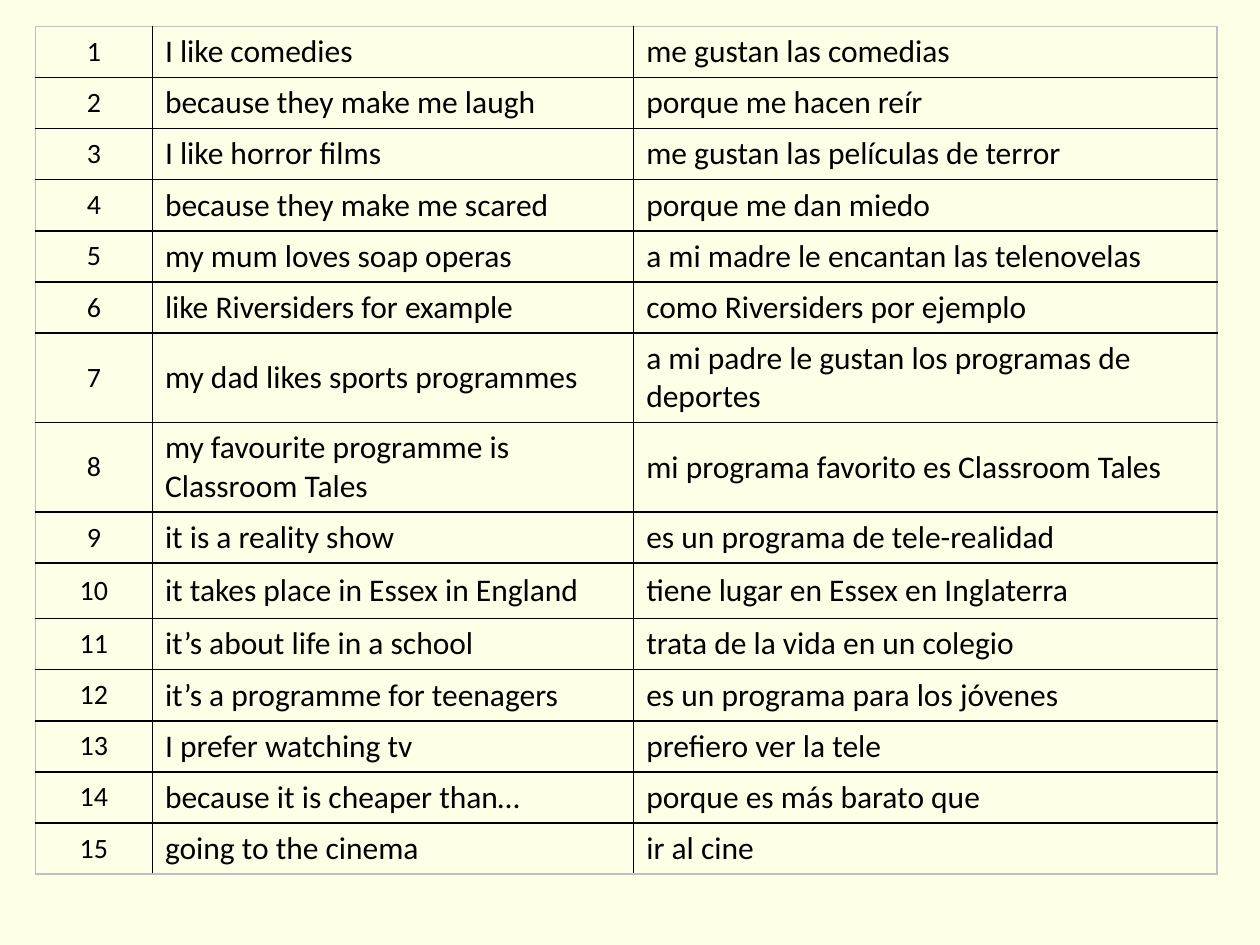
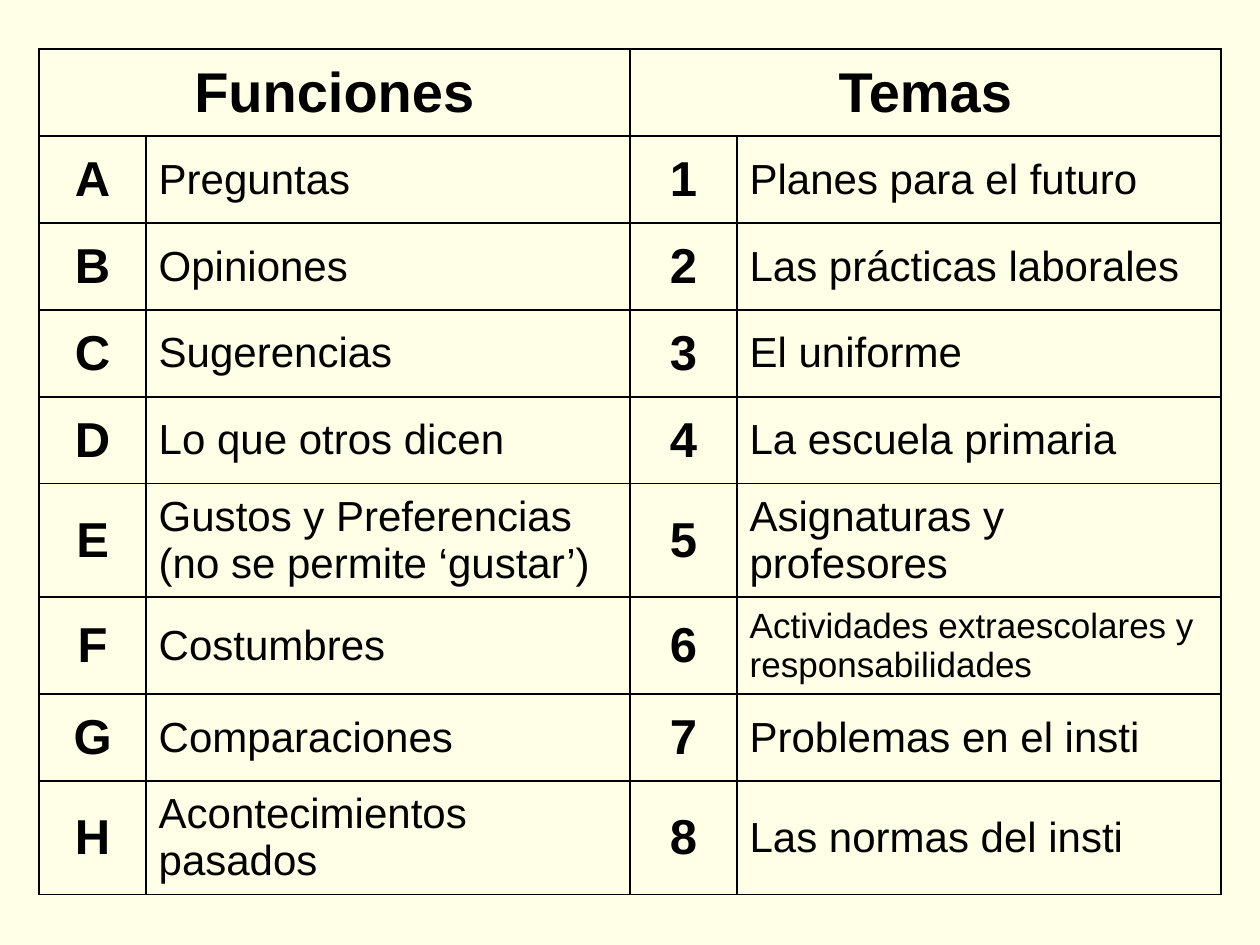
import pptx
import pptx.dml.color
import pptx.enum.text
import pptx.util
from lxml import etree
from pptx.oxml.ns import qn
from pptx.util import Inches

CREAM = pptx.dml.color.RGBColor(0xFF, 0xFF, 0xE7)
BLACK = pptx.dml.color.RGBColor(0, 0, 0)
GREY = pptx.dml.color.RGBColor(0xC0, 0xC0, 0xC0)
CENTER = pptx.enum.text.PP_ALIGN.CENTER
LEFT = pptx.enum.text.PP_ALIGN.LEFT

PHRASES = [
    ("I like comedies", "me gustan las comedias"),
    ("because they make me laugh", "porque me hacen reír"),
    ("I like horror films", "me gustan las películas de terror"),
    ("because they make me scared", "porque me dan miedo"),
    ("my mum loves soap operas", "a mi madre le encantan las telenovelas"),
    ("like Riversiders for example", "como Riversiders por ejemplo"),
    ("my dad likes sports programmes",
     "a mi padre le gustan los programas de deportes"),
    ("my favourite programme is Classroom Tales",
     "mi programa favorito es Classroom Tales"),
    ("it is a reality show", "es un programa de tele-realidad"),
    ("it takes place in Essex in England", "tiene lugar en Essex en Inglaterra"),
    ("it’s about life in a school", "trata de la vida en un colegio"),
    ("it’s a programme for teenagers", "es un programa para los jóvenes"),
    ("I prefer watching tv", "prefiero ver la tele"),
    ("because it is cheaper than…", "porque es más barato que"),
    ("going to the cinema", "ir al cine"),
]
PHRASE_HEIGHTS = [0.4] * 6 + [0.71] * 2 + [0.4, 0.44] + [0.4] * 5

FUNCTIONS_AND_TOPICS = [
    ("Preguntas", "Planes para el futuro"),
    ("Opiniones", "Las prácticas laborales"),
    ("Sugerencias", "El uniforme"),
    ("Lo que otros dicen", "La escuela primaria"),
    ("Gustos y Preferencias (no se permite ‘gustar’)",
     "Asignaturas y profesores"),
    ("Costumbres", "Actividades extraescolares y responsabilidades"),
    ("Comparaciones", "Problemas en el insti"),
    ("Acontecimientos pasados", "Las normas del insti"),
]
TOPIC_HEIGHTS = [0.69] * 5 + [0.9, 0.77, 0.69, 0.9]
SMALL_TOPIC = 6


def add_slide(deck):
    slide = deck.slides.add_slide(deck.slide_layouts[6])
    slide.background.fill.solid()
    slide.background.fill.fore_color.rgb = CREAM
    return slide


def write(cell, text, *, size, font, align=LEFT, bold=False):
    cell.vertical_anchor = pptx.enum.text.MSO_ANCHOR.MIDDLE
    paragraph = cell.text_frame.paragraphs[0]
    paragraph.alignment = align
    run = paragraph.add_run()
    run.text = text
    run.font.size = pptx.util.Pt(size)
    run.font.name = font
    run.font.bold = bold
    run.font.color.rgb = BLACK


def add_border(cell, side, color):
    """Draw one 1 pt edge of a cell; side is L, R, T or B."""
    properties = cell._tc.get_or_add_tcPr()
    line = etree.SubElement(properties, qn(f"a:ln{side}"),
                            w=str(pptx.util.Pt(1)))
    fill = etree.SubElement(line, qn("a:solidFill"))
    etree.SubElement(fill, qn("a:srgbClr"), val=str(color))


def add_grid(slide, left, top, widths, heights, frame_color=BLACK):
    """Add an empty, unfilled table with black inner lines."""
    table = slide.shapes.add_table(
        len(heights), len(widths), Inches(left), Inches(top),
        Inches(sum(widths)), Inches(sum(heights))).table
    table.first_row = table.horz_banding = False
    for column, width in zip(table.columns, widths):
        column.width = Inches(width)
    for row, height in zip(table.rows, heights):
        row.height = Inches(height)
    last_row, last_column = len(heights) - 1, len(widths) - 1
    for r in range(len(heights)):
        for c in range(len(widths)):
            cell = table.cell(r, c)
            on_frame = {"L": c == 0, "R": c == last_column,
                        "T": r == 0, "B": r == last_row}
            for side, outer in on_frame.items():
                add_border(cell, side, frame_color if outer else BLACK)
            cell.fill.background()
    return table


def add_phrase_list(deck):
    table = add_grid(add_slide(deck), 0.28, 0.21, [0.93, 3.82, 4.63],
                     PHRASE_HEIGHTS, frame_color=GREY)
    for r, (english, spanish) in enumerate(PHRASES):
        write(table.cell(r, 0), str(r + 1), size=16, font="Calibri",
              align=CENTER)
        write(table.cell(r, 1), english, size=18, font="Calibri")
        write(table.cell(r, 2), spanish, size=18, font="Calibri")


def add_function_topic_grid(deck):
    table = add_grid(add_slide(deck), 0.31, 0.39, [0.85, 3.84] * 2,
                     TOPIC_HEIGHTS)
    for c, heading in ((0, "Funciones"), (2, "Temas")):
        table.cell(0, c).merge(table.cell(0, c + 1))
        write(table.cell(0, c), heading, size=32, font="Arial",
              align=CENTER, bold=True)
    for r, (function, topic) in enumerate(FUNCTIONS_AND_TOPICS, 1):
        for c, key in ((0, "ABCDEFGH"[r - 1]), (2, str(r))):
            write(table.cell(r, c), key, size=28, font="Arial",
                  align=CENTER, bold=True)
        write(table.cell(r, 1), function, size=24, font="Arial")
        write(table.cell(r, 3), topic, size=20 if r == SMALL_TOPIC else 24,
              font="Arial")


def main():
    deck = pptx.Presentation()
    deck.slide_width, deck.slide_height = Inches(10), Inches(7.5)
    add_phrase_list(deck)
    add_function_topic_grid(deck)
    deck.save("out.pptx")


if __name__ == "__main__":
    main()
